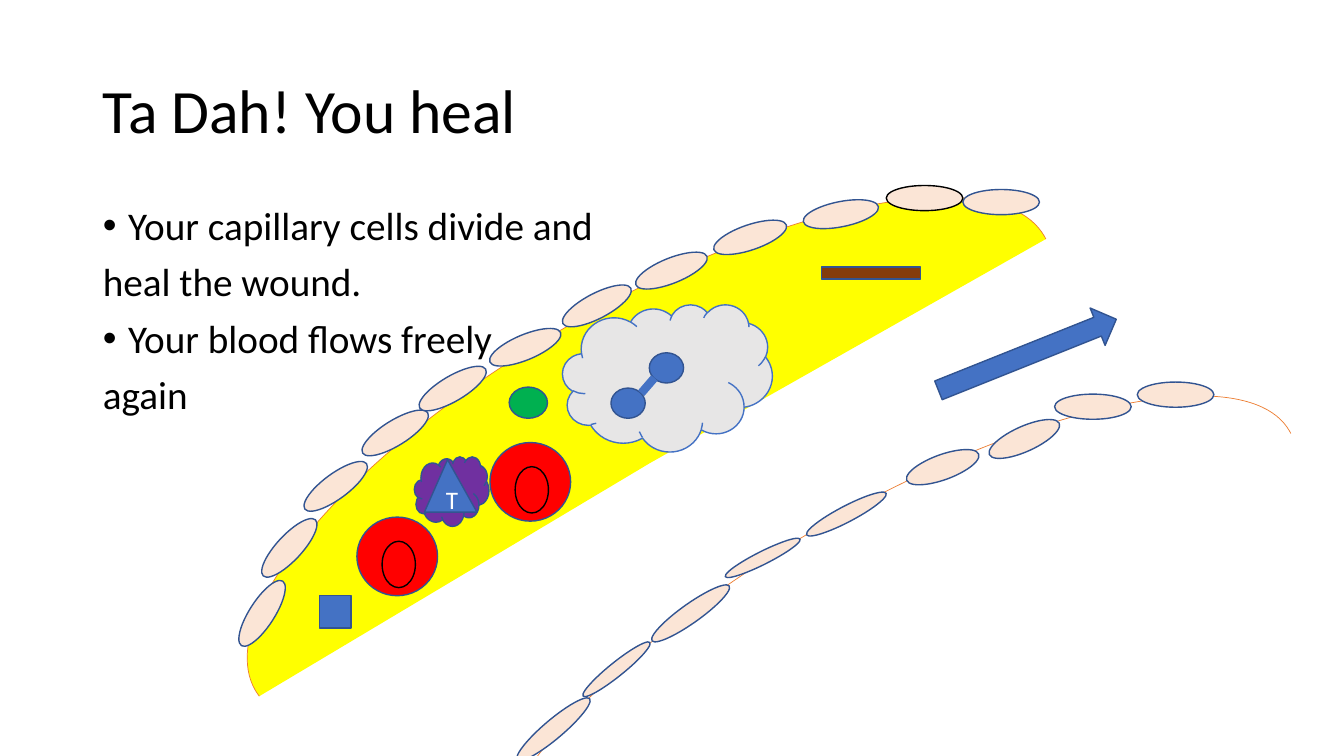
from lxml import etree
from pptx import Presentation
from pptx.dml.color import RGBColor
from pptx.enum import shapes, text
from pptx.oxml.ns import qn
from pptx.util import Inches, Pt

# Content
TITLE = "Ta Dah! You heal"
LINES = [  # text, bulleted
    ("Your capillary cells divide and", True),
    ("heal the wound.", False),
    ("Your blood flows freely", True),
    ("again", False),
]
BLUE, EDGE, SKIN, RED = "4472C4", "325491", "FBE5D6", "FF0000"
BLACK, WHITE, ORANGE = "000000", "FFFFFF", "ED7D31"
KIND = shapes.MSO_SHAPE
OVAL = KIND.OVAL

# Vessel walls: left, top, width, height, fill
ARCS = [(4.36, 5.03, 9.03, 2.99, None), (1.93, 3.01, 9.03, 3.17, "FFFF00")]
TILT, SWEEP = -29.9, (107.441, 0.233)

# Wall cells from lower left to upper right: left, top, tilt
CELL = (0.76, 0.25)
UPPER = [
    (2.22, 5.96, -57.4), (2.49, 5.31, -47.1), (2.95, 4.7, -36.4),
    (3.54, 4.17, -31.8), (4.11, 3.73, -30.5), (4.83, 3.32, -22.7),
    (5.54, 2.91, -27.5), (6.28, 2.56, -21.9), (7.06, 2.23, -18.9),
    (7.96, 2, -11.3), (8.79, 1.84, 0), (9.55, 1.88, 0),
]
DARK = 10  # the upper cell with a black outline
LOWER = [  # left, top, tilt, and a size where it differs
    (5.02, 7.14, -40.2, 0.94, 0.19), (5.69, 6.57, -38.8, 0.85, 0.14),
    (6.38, 5.99, -35.4, 0.94, 0.19), (7.15, 5.47, -26.7, 0.83, 0.13),
    (7.95, 5.02, -27.6, 0.89, 0.16), (8.97, 4.51, -19.9),
    (9.78, 4.23, -24.2), (10.46, 3.91, 0), (11.28, 3.79, 0),
]

# Contents of the blood
LOBES = [(6.06, 3.85), (6.44, 3.5)]
BRIDGE = (6.36, 3.9, 6.49, 3.75)
REDS = [(3.54, 5.13), (4.86, 4.39)]
BITS = [  # kind, left, top, width, height, fill
    (KIND.RECTANGLE, 3.17, 5.91, 0.31, 0.32, BLUE),
    (OVAL, 5.05, 3.84, 0.38, 0.31, "00B050"),
    (KIND.RECTANGLE, 8.15, 2.65, 0.98, 0.12, "843C0B"),
]

deck = Presentation()
deck.slide_width, deck.slide_height = Inches(13.33), Inches(7.5)
slide = deck.slides.add_slide(deck.slide_layouts[1])


def color(code):
    return RGBColor.from_string(code)


def place(item, left, top, width, height):
    item.left, item.top = Inches(left), Inches(top)
    item.width, item.height = Inches(width), Inches(height)


def write(para, words, size=18, ink=BLACK, align=text.PP_ALIGN.LEFT,
          space=None, before=None):
    run = para.add_run()
    run.text = words
    run.font.size, run.font.name = Pt(size), "Calibri"
    run.font.color.rgb = color(ink)
    para.alignment = align
    if space:
        para.line_spacing = space
    if before is not None:
        para.space_before = Pt(before)


def draw(kind, left, top, width, height, fill=None, line=EDGE, weight=1,
         tilt=0, adjust=()):
    item = slide.shapes.add_shape(
        kind, Inches(left), Inches(top), Inches(width), Inches(height))
    item.shadow.inherit = False
    item.rotation = tilt
    for i, value in enumerate(adjust):
        item.adjustments[i] = value
    if fill:
        item.fill.solid()
        item.fill.fore_color.rgb = color(fill)
    else:
        item.fill.background()
    item.line.color.rgb = color(line)
    item.line.width = Pt(weight)
    return item


# Title and list
title, body = slide.placeholders
place(title, 0.92, 0.4, 11.5, 1.45)
title.text_frame.vertical_anchor = text.MSO_ANCHOR.MIDDLE
write(title.text_frame.paragraphs[0], TITLE, size=44, space=0.9)

place(body, 0.92, 2, 11.5, 4.76)
frame = body.text_frame
frame.auto_size = text.MSO_AUTO_SIZE.NONE
for i, (words, dot) in enumerate(LINES):
    para = frame.add_paragraph() if i else frame.paragraphs[0]
    write(para, words, size=28, space=0.9, before=10)
    props = para._p.get_or_add_pPr()
    inset = Inches(0.25) if dot else 0
    props.set("marL", str(inset))
    props.set("indent", str(-inset))
    if dot:
        etree.SubElement(props, qn("a:buFont")).set("typeface", "Arial")
        etree.SubElement(props, qn("a:buChar")).set("char", "•")
    else:
        etree.SubElement(props, qn("a:buNone"))

# Vessel
for *box, fill in ARCS:
    draw(KIND.ARC, *box, fill=fill, line=ORANGE, weight=0.5, tilt=TILT,
         adjust=SWEEP)

# White cell with a two-lobed nucleus
draw(KIND.CLOUD, 5.58, 3.02, 2.08, 1.46, fill="E7E6E6", line=BLUE)
for left, top in LOBES:
    draw(OVAL, left, top, 0.34, 0.3, fill=BLUE)
bridge = slide.shapes.add_connector(
    shapes.MSO_CONNECTOR.STRAIGHT, *(Inches(n) for n in BRIDGE))
bridge.line.color.rgb = color(BLUE)
bridge.line.width = Pt(6)
etree.SubElement(bridge._element.spPr, qn("a:effectLst"))

# Red cells
for left, top in REDS:
    draw(OVAL, left, top, 0.8, 0.78, fill=RED)
    draw(OVAL, left + 0.25, top + 0.24, 0.33, 0.46, fill=RED, line=BLACK)

# T cell
draw(KIND.CLOUD, 4.11, 4.53, 0.74, 0.69, fill="7030A0")
mark = draw(KIND.ISOSCELES_TRIANGLE, 4.21, 4.56, 0.52, 0.52, fill=BLUE,
            adjust=[0.44])
mark.text_frame.vertical_anchor = text.MSO_ANCHOR.MIDDLE
write(mark.text_frame.paragraphs[0], "T", ink=WHITE,
      align=text.PP_ALIGN.CENTER)

# Small particles
for kind, *box, fill in BITS:
    draw(kind, *box, fill=fill)

# Wall cells
for i, (left, top, tilt) in enumerate(UPPER):
    draw(OVAL, left, top, *CELL, fill=SKIN, tilt=tilt,
         line=BLACK if i == DARK else EDGE)
for left, top, tilt, *size in LOWER:
    draw(OVAL, left, top, *(size or CELL), fill=SKIN, tilt=tilt)

# Flow arrow
draw(KIND.RIGHT_ARROW, 9.24, 3.32, 1.9, 0.4, fill=BLUE, tilt=-21.8)

deck.save("out.pptx")
